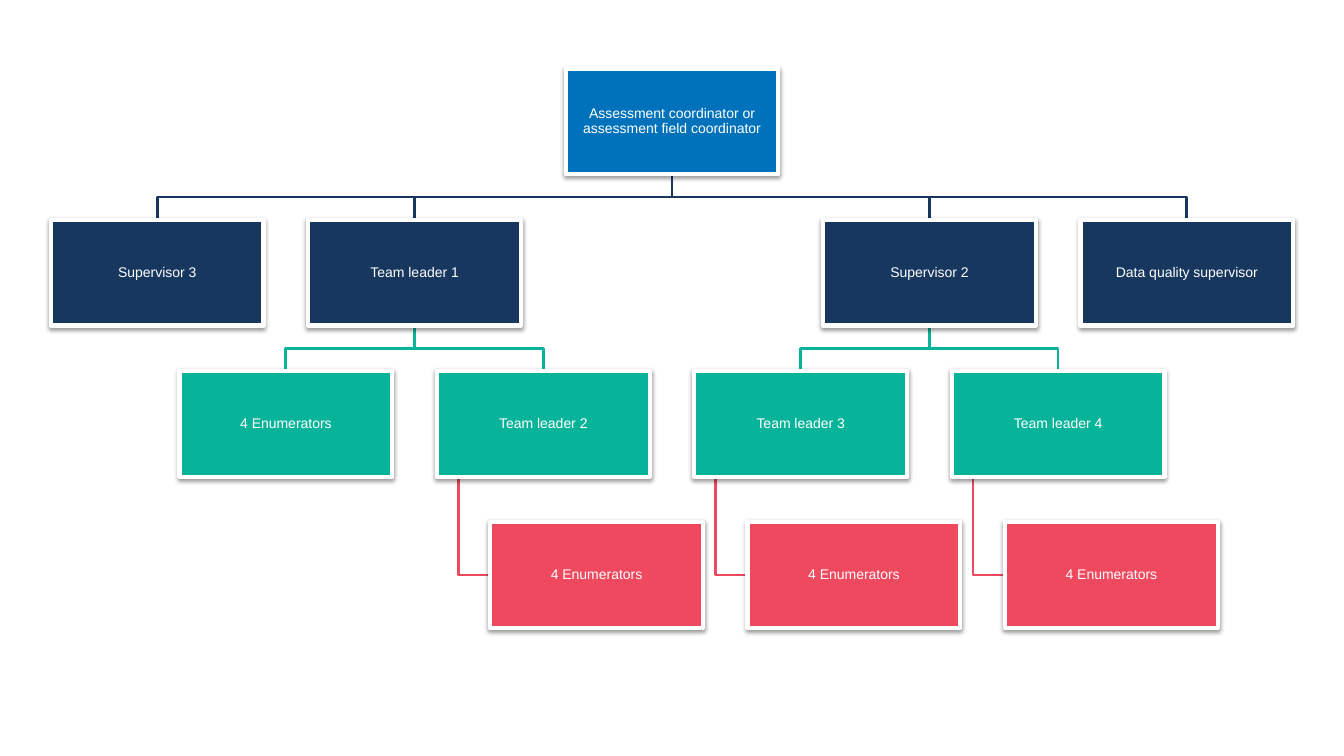
from lxml import etree
from pptx import Presentation
from pptx.dml.color import RGBColor
from pptx.enum.shapes import MSO_SHAPE
from pptx.enum.text import MSO_ANCHOR, PP_ALIGN
from pptx.oxml import parse_xml
from pptx.util import Inches, Pt

RECT = MSO_SHAPE.RECTANGLE
CENTER = PP_ALIGN.CENTER
MIDDLE = MSO_ANCHOR.MIDDLE

THEME = {
    "levels": ["0072BC", "17375F", "08B499", "EF4960"],
    "white": "FFFFFF",
    "font": "Arial",
    "size": Pt(10),
    "border": Pt(3),
    "line": Pt(2),
}

SHADOW = (
    '<a:effectLst xmlns:a="http://schemas.openxmlformats.org/drawingml/2006/main">'
    '<a:outerShdw blurRad="%d" dist="%d" dir="5400000" rotWithShape="0">'
    '<a:srgbClr val="000000"><a:alpha val="38000"/></a:srgbClr>'
    '</a:outerShdw></a:effectLst>' % (Pt(3.1), Pt(1.6))
)

prs = Presentation()
prs.slide_width, prs.slide_height = Inches(13.33), Inches(7.5)
s = prs.slides.add_slide(prs.slide_layouts[6])

BOX_W, BOX_H = Inches(2.11), Inches(1.05)
COL, ROW = BOX_W * 1.21, Inches(1.5)
LEFT = (prs.slide_width - BOX_W) / 2 - 2 * COL
TOP = Inches(0.68)
INDENT = BOX_W / 4 / COL
HANG = BOX_W / 10

ROLES = [
    ("Assessment coordinator or assessment field coordinator", 0, 2, None),
    ("Supervisor 3", 1, 0, 0),
    ("Team leader 1", 1, 1, 0),
    ("Supervisor 2", 1, 3, 0),
    ("Data quality supervisor", 1, 4, 0),
    ("4 Enumerators", 2, 0.5, 2),
    ("Team leader 2", 2, 1.5, 2),
    ("Team leader 3", 2, 2.5, 3),
    ("Team leader 4", 2, 3.5, 3),
    ("4 Enumerators", 3, 1.5 + INDENT, 6),
    ("4 Enumerators", 3, 2.5 + INDENT, 7),
    ("4 Enumerators", 3, 3.5 + INDENT, 8),
]


def corner(role):
    return round(LEFT + role[2] * COL), TOP + role[1] * ROW


for role in ROLES[1:]:
    x, y = corner(role)
    px, py = corner(ROLES[role[3]])
    py += BOX_H
    if role[1] == 3:
        px += HANG
        points = [(px, py), (px, y + BOX_H / 2), (x, y + BOX_H / 2)]
    else:
        px, x, mid = px + BOX_W / 2, x + BOX_W / 2, (py + y) / 2
        points = [(px, py), (px, mid), (x, mid), (x, y)]
    points = [(round(a), round(b)) for a, b in points]
    path = s.shapes.build_freeform(*points[0])
    path.add_line_segments(points[1:], close=False)
    sp = path.convert_to_shape()
    sp.shadow.inherit = False
    sp.fill.background()
    sp.line.color.rgb = RGBColor.from_string(THEME["levels"][role[1]])
    sp.line.width = THEME["line"]

for role in ROLES:
    sp = s.shapes.add_shape(RECT, *corner(role), BOX_W, BOX_H)
    sp.fill.solid()
    sp.fill.fore_color.rgb = RGBColor.from_string(THEME["levels"][role[1]])
    sp.line.color.rgb = RGBColor.from_string(THEME["white"])
    sp.line.width = THEME["border"]
    sp._element.spPr.append(parse_xml(SHADOW))
    tf = sp.text_frame
    tf.word_wrap = True
    tf.vertical_anchor = MIDDLE
    tf.margin_left = tf.margin_right = Inches(0.01)
    tf.margin_top = tf.margin_bottom = Inches(0.01)
    p = tf.paragraphs[0]
    p.alignment = CENTER
    p.line_spacing = 0.9
    r = p.add_run()
    r.text = role[0]
    r.font.name = THEME["font"]
    r.font.size = THEME["size"]
    r.font.color.rgb = RGBColor.from_string(THEME["white"])

prs.save("out.pptx")
